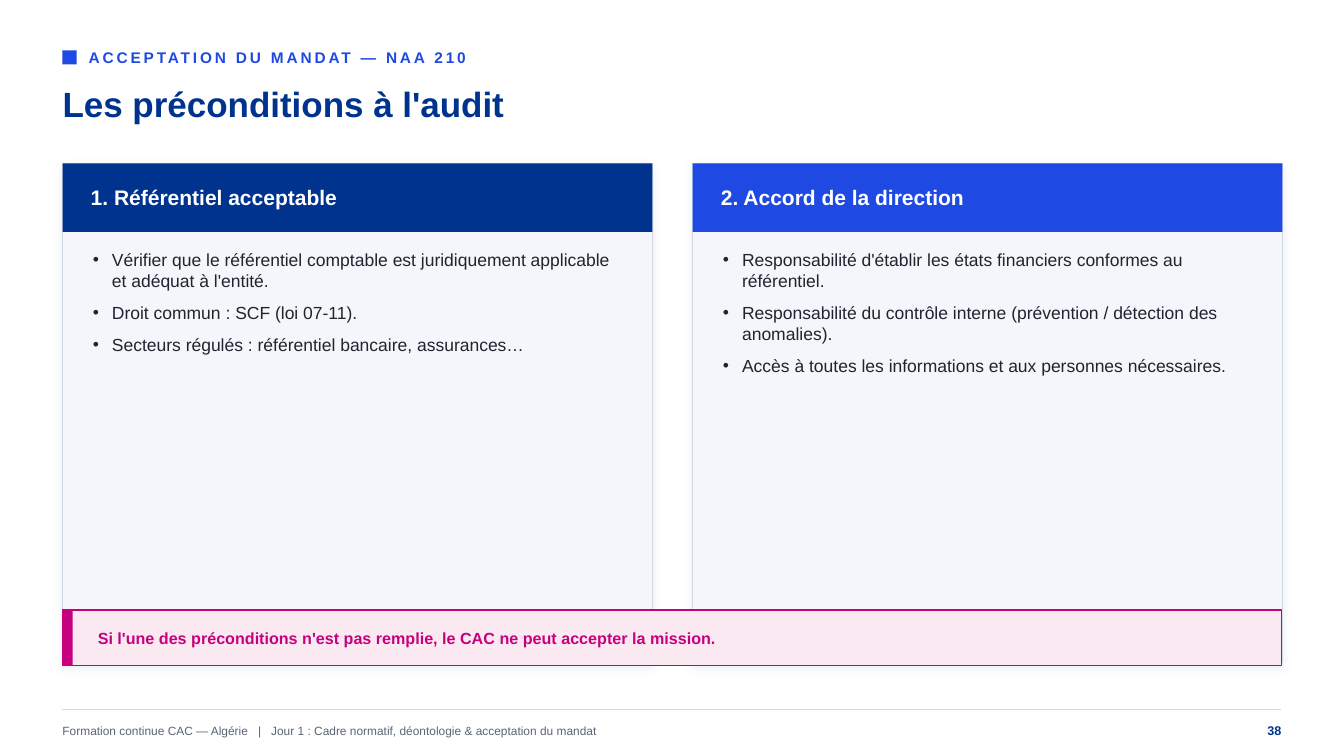
from dataclasses import dataclass

from lxml import etree
from pptx import Presentation
from pptx import util as u
from pptx.dml.color import RGBColor
from pptx.enum import shapes, text
from pptx.oxml import ns

PX = 9144  # EMU per px, 100 px to the inch


@dataclass(frozen=True)
class Theme:
    font: str = "Arial"
    navy: str = "00338D"
    blue: str = "1E49E2"
    magenta: str = "C6007E"
    blush: str = "FBE9F2"
    panel: str = "F4F6FB"
    rule: str = "D2D9E6"
    shade: str = "9AA7BD"
    ink: str = "20242E"
    muted: str = "5A6473"
    white: str = "FFFFFF"
    title_size: float = 25
    heading_size: float = 15
    list_size: float = 12.5
    alert_size: float = 11.5
    kicker_size: float = 11
    page_size: float = 9
    footer_size: float = 8.5


@dataclass(frozen=True)
class Box:
    left: int
    top: int
    width: int
    height: int

    def emu(self) -> list[int]:
        return [n * PX for n in (self.left, self.top, self.width, self.height)]


@dataclass(frozen=True)
class Precondition:
    heading: str
    color: str
    points: tuple[str, ...]


THEME = Theme()
MARGIN, CONTENT_WIDTH = 62, 1209
CARD_TOP, CARD_WIDTH, CARD_HEIGHT, CARD_STEP = 162, 585, 495, 625
HEADER_HEIGHT = 68
ALERT_TOP, ALERT_HEIGHT = 605, 55
FOOTER_LINE, FOOTER_TOP = 704, 710
FOOTER_PARTS = ("Formation continue CAC — Algérie", " ", "|", " ",
                "Jour 1 : Cadre normatif, déontologie & acceptation du mandat")

PRECONDITIONS = (
    Precondition("1. Référentiel acceptable", THEME.navy, (
        "Vérifier que le référentiel comptable est juridiquement applicable et adéquat à l'entité.",
        "Droit commun : SCF (loi 07-11).",
        "Secteurs régulés : référentiel bancaire, assurances…",
    )),
    Precondition("2. Accord de la direction", THEME.blue, (
        "Responsabilité d'établir les états financiers conformes au référentiel.",
        "Responsabilité du contrôle interne (prévention / détection des anomalies).",
        "Accès à toutes les informations et aux personnes nécessaires.",
    )),
)


def add_child(parent, tag: str, **attributes: str):
    return etree.SubElement(parent, ns.qn(tag), attributes)


def add_rect(slide, box: Box, fill: str, line: str | None = None):
    rect = slide.shapes.add_shape(shapes.MSO_SHAPE.RECTANGLE, *box.emu())
    rect.shadow.inherit = False
    rect.fill.solid()
    rect.fill.fore_color.rgb = RGBColor.from_string(fill)
    if line:
        rect.line.color.rgb = RGBColor.from_string(line)
        rect.line.width = u.Pt(1)
    else:
        rect.line.fill.background()
    return rect


def add_soft_shadow(shape) -> None:
    effects = shape._element.spPr.find(ns.qn("a:effectLst"))
    shadow = add_child(effects, "a:outerShdw", blurRad=str(u.Pt(7)), dist=str(u.Pt(3)),
                       dir="5400000", algn="t", rotWithShape="0")
    color = add_child(shadow, "a:srgbClr", val=THEME.shade)
    add_child(color, "a:alpha", val="22000")


def format_runs(frame, size: float, color: str, bold: bool) -> None:
    for paragraph in frame.paragraphs:
        for run in paragraph.runs:
            run.font.name = THEME.font
            run.font.size = u.Pt(size)
            run.font.bold = bold
            run.font.color.rgb = RGBColor.from_string(color)


def prepare_frame(frame, anchor) -> None:
    """Remove the insets, wrap the text and fix its size."""
    frame.margin_left = frame.margin_top = frame.margin_right = frame.margin_bottom = 0
    frame.word_wrap = True
    frame.auto_size = text.MSO_AUTO_SIZE.NONE
    frame.vertical_anchor = anchor


def add_label(slide, box: Box, wording: str, size: float, color: str, bold: bool = True):
    frame = slide.shapes.add_textbox(*box.emu()).text_frame
    prepare_frame(frame, text.MSO_ANCHOR.MIDDLE)
    frame.text = wording
    format_runs(frame, size, color, bold)
    return frame.paragraphs[0]


def place(placeholder, box: Box) -> None:
    """Move a placeholder to its box and in front of what is already drawn."""
    placeholder.left, placeholder.top, placeholder.width, placeholder.height = box.emu()
    element = placeholder._element
    element.getparent().append(element)


def fill_title(title, wording: str) -> None:
    place(title, Box(MARGIN, 72, 1210, 62))
    prepare_frame(title.text_frame, text.MSO_ANCHOR.MIDDLE)
    title.text_frame.text = wording
    title.text_frame.paragraphs[0].alignment = text.PP_ALIGN.LEFT
    format_runs(title.text_frame, THEME.title_size, THEME.navy, True)


def fill_list(body, box: Box, points: tuple[str, ...]) -> None:
    place(body, box)
    frame = body.text_frame
    prepare_frame(frame, text.MSO_ANCHOR.TOP)
    frame.text = "\n".join(points)
    for paragraph in frame.paragraphs:
        properties = paragraph._p.get_or_add_pPr()
        properties.set("marL", str(19 * PX))
        properties.set("indent", str(-19 * PX))
        add_child(properties, "a:buFont", typeface=THEME.font)
        add_child(properties, "a:buChar", char="•")
        paragraph.space_before = u.Pt(0)
        paragraph.space_after = u.Pt(8)
    format_runs(frame, THEME.list_size, THEME.ink, False)


def draw_card(slide, left: int, item: Precondition, body) -> None:
    card = add_rect(slide, Box(left, CARD_TOP, CARD_WIDTH, CARD_HEIGHT), THEME.panel, THEME.rule)
    add_soft_shadow(card)
    add_rect(slide, Box(left, CARD_TOP, CARD_WIDTH, HEADER_HEIGHT), item.color)
    add_label(slide, Box(left + 28, CARD_TOP, CARD_WIDTH - 50, HEADER_HEIGHT),
              item.heading, THEME.heading_size, THEME.white)
    fill_list(body, Box(left + 30, 247, CARD_WIDTH - 60, 395), item.points)


def draw_alert(slide) -> None:
    add_rect(slide, Box(MARGIN, ALERT_TOP, CONTENT_WIDTH, ALERT_HEIGHT), THEME.blush, THEME.magenta)
    add_rect(slide, Box(MARGIN, ALERT_TOP, 10, ALERT_HEIGHT), THEME.magenta)
    add_label(slide, Box(MARGIN + 35, ALERT_TOP, CONTENT_WIDTH - 60, ALERT_HEIGHT),
              "Si l'une des préconditions n'est pas remplie, le CAC ne peut accepter la mission.",
              THEME.alert_size, THEME.magenta)


def draw_footer(slide) -> None:
    right = MARGIN + CONTENT_WIDTH
    rule = slide.shapes.add_connector(shapes.MSO_CONNECTOR.STRAIGHT, MARGIN * PX,
                                      FOOTER_LINE * PX, right * PX, FOOTER_LINE * PX)
    rule.line.color.rgb = RGBColor.from_string(THEME.rule)
    rule.line.width = u.Pt(1)
    add_child(rule._element.spPr, "a:effectLst")

    frame = slide.shapes.add_textbox(*Box(MARGIN, FOOTER_TOP, 1050, 30).emu()).text_frame
    prepare_frame(frame, text.MSO_ANCHOR.MIDDLE)
    for part in FOOTER_PARTS:
        run = frame.paragraphs[0].add_run()
        run.text = part
        if part == " ":
            run.font._element.set("spc", "470")
    format_runs(frame, THEME.footer_size, THEME.muted, False)

    page = add_label(slide, Box(right - 100, FOOTER_TOP, 100, 30), "38", THEME.page_size, THEME.navy)
    page.alignment = text.PP_ALIGN.RIGHT


def main() -> None:
    deck = Presentation()
    deck.slide_width, deck.slide_height = 1333 * PX, 750 * PX
    slide = deck.slides.add_slide(deck.slide_layouts.get_by_name("Two Content"))
    title, *bodies = slide.placeholders

    add_rect(slide, Box(MARGIN, 50, 14, 14), THEME.blue)
    kicker = add_label(slide, Box(88, 43, 1200, 28), "ACCEPTATION DU MANDAT — NAA 210",
                       THEME.kicker_size, THEME.blue)
    kicker.runs[0].font._element.set("spc", "200")
    fill_title(title, "Les préconditions à l'audit")
    for column, (item, body) in enumerate(zip(PRECONDITIONS, bodies)):
        draw_card(slide, MARGIN + column * CARD_STEP, item, body)
    draw_alert(slide)
    draw_footer(slide)
    deck.save("out.pptx")


if __name__ == "__main__":
    main()
